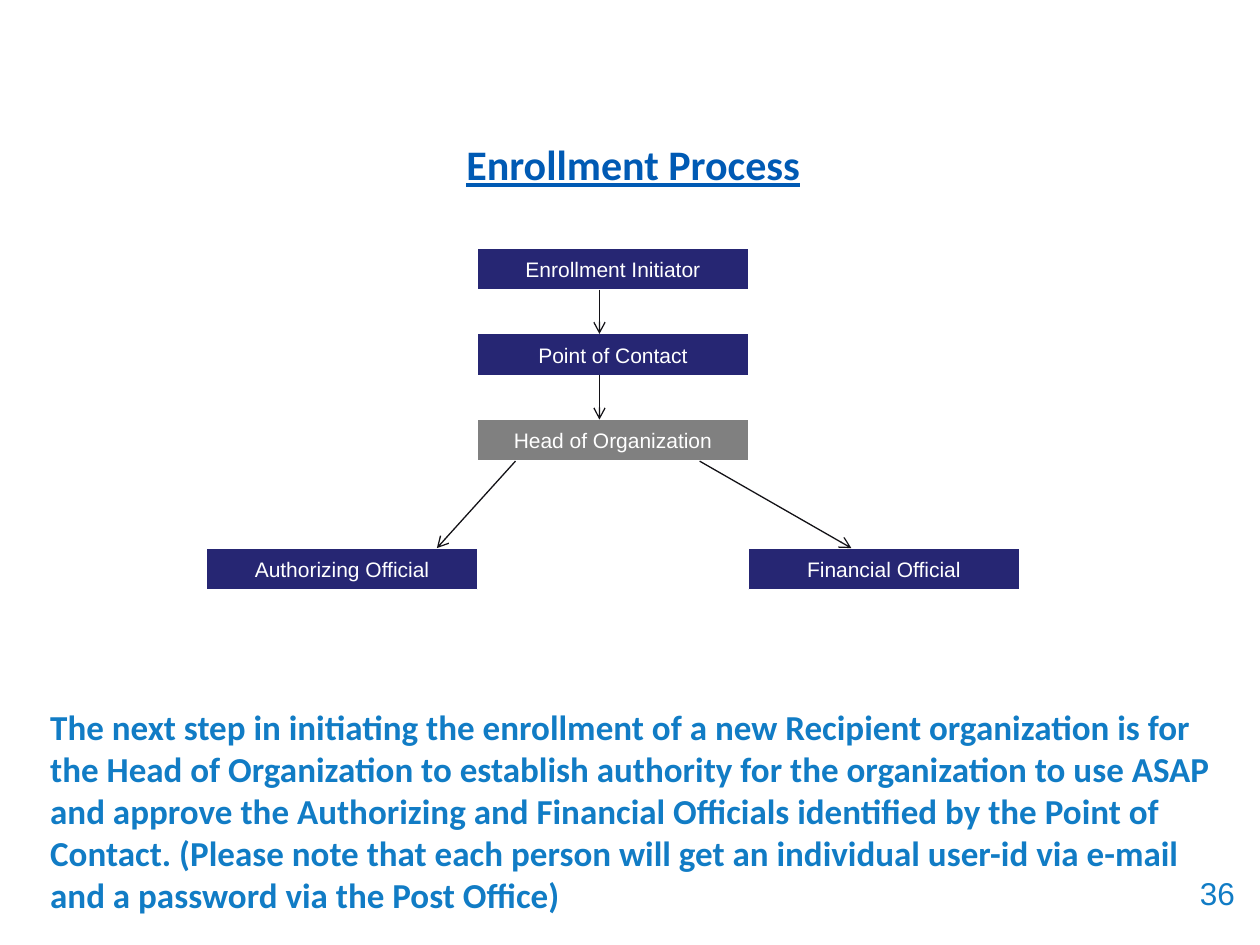
from lxml.etree import SubElement
from pptx import Presentation
from pptx.dml.color import RGBColor
from pptx.enum.shapes import MSO_CONNECTOR as LINK, MSO_SHAPE as SHAPE
from pptx.enum.text import MSO_ANCHOR as ANCHOR, PP_ALIGN as ALIGN
from pptx.oxml.ns import qn
from pptx.util import Inches, Pt

NAVY = RGBColor(0x26, 0x26, 0x73)
GRAY = RGBColor(0x80, 0x80, 0x80)
WHITE = RGBColor(0xFF, 0xFF, 0xFF)
INK = RGBColor(0x13, 0x12, 0x17)
TITLE_BLUE = RGBColor(0x00, 0x5A, 0xB4)
TEXT_BLUE = RGBColor(0x11, 0x7C, 0xC5)

GRID_LEFT, GRID_TOP = 1.64, 1.97
COLUMN, ROW = 2.15, 0.34
STEP_HEIGHT = 0.33

STEPS = [
    ("Enrollment Initiator", 1, 0, NAVY),
    ("Point of Contact", 1, 2, NAVY),
    ("Head of Organization", 1, 4, GRAY),
    ("Financial Official", 2, 7, NAVY),
    ("Authorizing Official", 0, 7, NAVY),
]
ARROWS = [
    (1.45, 0, 1.45, 2),
    (1.45, 2, 1.45, 4),
    (1.14, 4, 0.85, 7),
    (1.82, 4, 2.38, 7),
]
EXPLANATION = (
    "The next step in initiating the enrollment of a new Recipient organization "
    "is for the Head of Organization to establish authority for the organization "
    "to use ASAP and approve the Authorizing and Financial Officials identified "
    "by the Point of Contact. (Please note that each person will get an "
    "individual user-id via e-mail and a password via the Post Office)"
)


def column_x(column):
    return Inches(GRID_LEFT + column * COLUMN)


def row_y(row):
    return Inches(GRID_TOP + row * ROW)


def write(frame, words, color, align, **format_values):
    paragraph = frame.paragraphs[0]
    paragraph.alignment = align
    run = paragraph.add_run()
    run.text = words
    for name, value in format_values.items():
        setattr(run.font, name, value)
    run.font.color.rgb = color


def add_text(slide, area, words, color, align, **format_values):
    frame = slide.shapes.add_textbox(*map(Inches, area)).text_frame
    frame.word_wrap = True
    write(frame, words, color, align, **format_values)


def add_step(slide, words, column, row, fill):
    step = slide.shapes.add_shape(
        SHAPE.FLOWCHART_PROCESS, column_x(column), row_y(row),
        Inches(COLUMN), Inches(STEP_HEIGHT))
    step.shadow.inherit = False
    step.fill.solid()
    step.fill.fore_color.rgb = fill
    step.line.color.rgb = WHITE
    step.line.width = Pt(0.75)
    step.text_frame.word_wrap = False
    step.text_frame.vertical_anchor = ANCHOR.MIDDLE
    write(step.text_frame, words, WHITE, ALIGN.CENTER, name="Arial", size=Pt(12))


def add_arrow(slide, from_column, from_row, to_column, to_row):
    arrow = slide.shapes.add_connector(
        LINK.STRAIGHT, column_x(from_column), row_y(from_row) + Inches(STEP_HEIGHT),
        column_x(to_column), row_y(to_row))
    arrow.line.color.rgb = INK
    arrow.line.width = Pt(0.75)
    SubElement(arrow.line._get_or_add_ln(), qn("a:tailEnd"), type="arrow")
    SubElement(arrow._element.spPr, qn("a:effectLst"))


def main():
    deck = Presentation()
    deck.slide_width, deck.slide_height = Inches(10), Inches(7.5)
    slide = deck.slides.add_slide(deck.slide_layouts[6])

    add_text(slide, (0.75, 1.05, 8.55, 0.59), "Enrollment Process", TITLE_BLUE,
             ALIGN.CENTER, name="Calibri", size=Pt(24), bold=True, underline=True)
    for step in STEPS:
        add_step(slide, *step)
    for arrow in ARROWS:
        add_arrow(slide, *arrow)
    add_text(slide, (0.3, 5.55, 9.41, 1.78), EXPLANATION, TEXT_BLUE,
             ALIGN.LEFT, name="Calibri", size=Pt(20), bold=True)
    add_text(slide, (7.57, 6.89, 2.33, 0.52), "36", TEXT_BLUE,
             ALIGN.RIGHT, name="Arial", size=Pt(18))

    deck.save("out.pptx")


if __name__ == "__main__":
    main()
